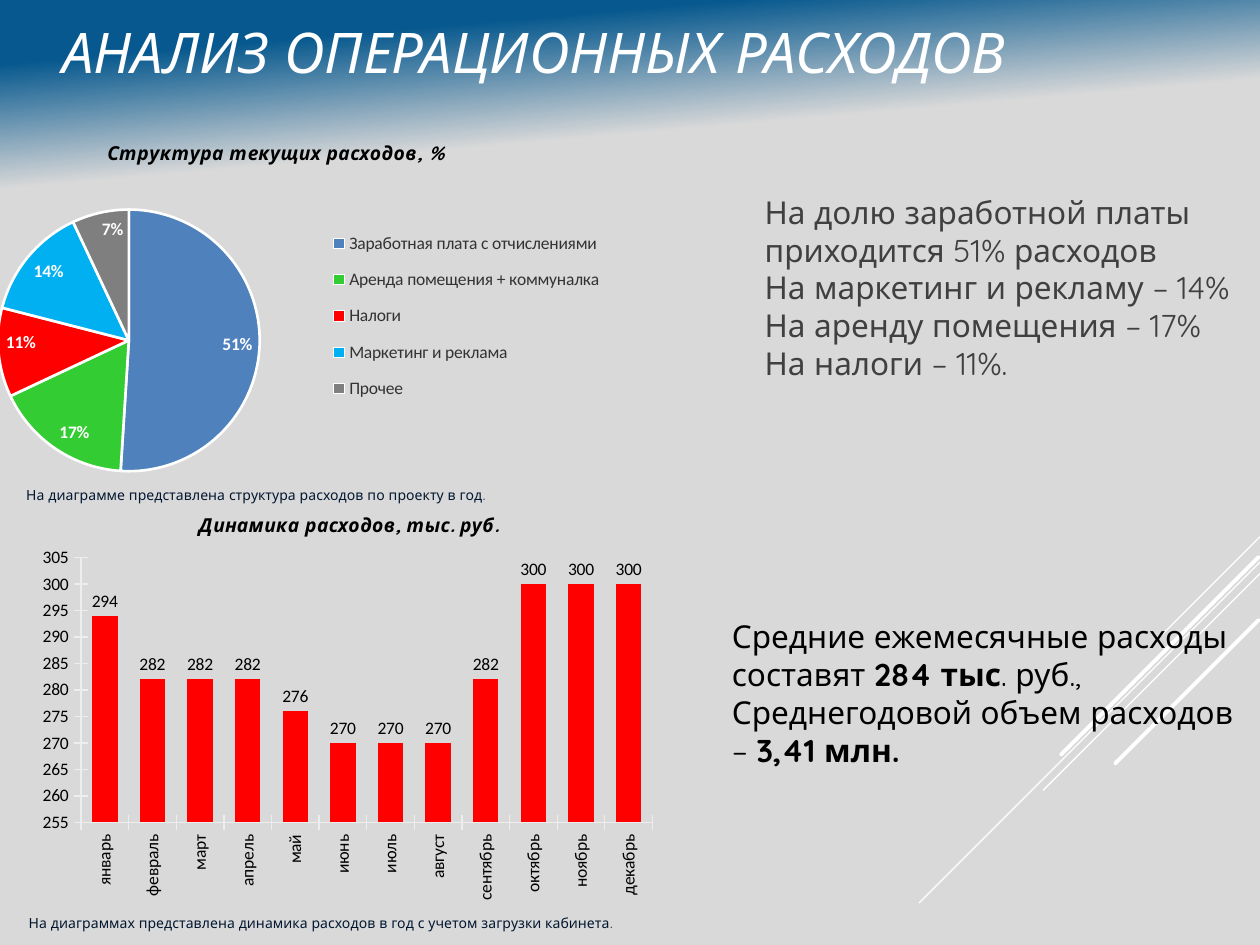
from lxml import etree
from pptx import Presentation
from pptx import util as u
from pptx.chart import data as chart_data
from pptx.dml.color import RGBColor
from pptx.enum import chart as kinds
from pptx.enum import shapes, text
from pptx.oxml import ns

COLOURS = {
    "sky": "06588E", "ground": "D9D9D9", "white": "FFFFFF", "black": "000000",
    "body": "404040", "caption": "031730", "legend": "333333", "axis": "EEEEEE",
    "salary": "4F81BD", "rent": "33CC33", "red": "FF0000",
    "marketing": "00B0F0", "other": "7F7F7F",
}
HEADING_FONT = "Quicksand"
CHART_FONT = "Calibri"
RAYS = [
    (25.4, 10.82, 2.11, 0.75),
    (25.4, 11.33, 6.87, 0.75),
    (25.4, 11.56, 4.37, 0.75),
    (25.37, 11.23, 3.98, 2.25),
    (25.37, 12.5, 2.89, 2.25),
]
EXPENSES = [
    ("Заработная плата с отчислениями", 51, "salary"),
    ("Аренда помещения + коммуналка", 17, "rent"),
    ("Налоги", 11, "red"),
    ("Маркетинг и реклама", 14, "marketing"),
    ("Прочее", 7, "other"),
]
MONTHS = ["январь", "февраль", "март", "апрель", "май", "июнь", "июль",
          "август", "сентябрь", "октябрь", "ноябрь", "декабрь"]
MONTHLY = [294] + [282] * 3 + [276] + [270] * 3 + [282] + [300] * 3


def colour(name):
    return RGBColor.from_string(COLOURS[name])


def style(font, size, shade, face=HEADING_FONT, bold=False, italic=False):
    font.size, font.name = u.Pt(size), face
    font.bold, font.italic = bold, italic
    font.color.rgb = colour(shade)


def place(item, box):
    item.left, item.top, item.width, item.height = map(u.Cm, box)


def paint_background(page):
    fill = page.background.fill
    fill.gradient()
    fill.gradient_angle = 275
    for stop, shade, position in zip(fill.gradient_stops, ("sky", "ground"), (0.06, 0.18)):
        stop.color.rgb = colour(shade)
        stop.position = position


def draw_rays(page):
    tree = page.shapes.title.element.getparent()
    for index, (x, y, reach, weight) in enumerate(RAYS):
        ray = page.shapes.add_connector(
            shapes.MSO_CONNECTOR.STRAIGHT, u.Cm(x), u.Cm(y), u.Cm(x - reach), u.Cm(y + reach))
        ray.line.color.rgb = colour("white")
        ray.line.width = u.Pt(weight)
        ray.line._get_or_add_ln().set("cap", "rnd")
        etree.SubElement(ray.element.spPr, ns.qn("a:effectLst"))
        tree.insert(2 + index, ray.element)


def write_title(title, box):
    place(title, box)
    frame = title.text_frame
    frame.text = "АНАЛИЗ ОПЕРАЦИОННЫХ РАСХОДОВ"
    frame.auto_size = text.MSO_AUTO_SIZE.NONE
    frame.vertical_anchor = text.MSO_ANCHOR.MIDDLE
    para = frame.paragraphs[0]
    para.alignment = text.PP_ALIGN.LEFT
    para._p.get_or_add_pPr().set("marL", str(u.Cm(1)))
    style(para.runs[0].font, 32, "white", italic=True)


def write_body(body, box, lines, shade):
    place(body, box)
    frame = body.text_frame
    frame.text = "\n".join("" for line in lines)
    frame.auto_size = text.MSO_AUTO_SIZE.NONE
    for para, spans in zip(frame.paragraphs, lines):
        para.space_before = u.Pt(0)
        para.line_spacing = 1.0
        properties = para._p.get_or_add_pPr()
        properties.set("marL", "0")
        properties.set("indent", "0")
        etree.SubElement(properties, ns.qn("a:buNone"))
        for words, bold in spans:
            span = para.add_run()
            span.text = words
            style(span.font, 18, shade, bold=bold)


def write_caption(page, box, words):
    caption = page.shapes.add_textbox(*map(u.Cm, box))
    caption.text_frame.word_wrap = True
    caption.text_frame.text = words
    style(caption.text_frame.paragraphs[0].runs[0].font, 8, "caption")


def set_layout(chart, tag, index, **fractions):
    parent = chart.element.find(".//" + ns.qn(tag))
    for old in parent.findall(ns.qn("c:layout")):
        parent.remove(old)
    layout = etree.Element(ns.qn("c:layout"))
    manual = etree.SubElement(layout, ns.qn("c:manualLayout"))
    if tag == "c:plotArea":
        etree.SubElement(manual, ns.qn("c:layoutTarget"), val="inner")
    for key in ("xMode", "yMode"):
        etree.SubElement(manual, ns.qn("c:" + key), val="edge")
    for key, value in fractions.items():
        etree.SubElement(manual, ns.qn("c:" + key), val=str(value))
    parent.insert(index, layout)


def add_titled_chart(page, box, kind, names, values, heading):
    data = chart_data.CategoryChartData()
    data.categories = names
    data.add_series("Series 1", values)
    chart = page.shapes.add_chart(kind, *map(u.Cm, box), data).chart
    style(chart.font, 10, "black", CHART_FONT)
    chart.has_title = True
    chart.chart_title.text_frame.text = heading
    span = chart.chart_title.text_frame.paragraphs[0].runs[0]
    style(span.font, 11, "black", bold=True, italic=True)
    set_layout(chart, "c:title", 1, x=0.26, y=0.05)
    return chart


def draw_structure(page, box):
    names, values, shades = zip(*EXPENSES)
    chart = add_titled_chart(page, box, kinds.XL_CHART_TYPE.PIE, names, values,
                             "Структура текущих расходов, %")
    chart.has_legend = True
    chart.legend.position = kinds.XL_LEGEND_POSITION.RIGHT
    chart.legend.include_in_layout = False
    style(chart.legend.font, 10, "legend", CHART_FONT)
    set_layout(chart, "c:legend", 1, x=0.57, y=0.27, w=0.4, h=0.53)
    set_layout(chart, "c:plotArea", 0, x=0.11, y=0.25, w=0.37, h=0.7)
    plot = chart.plots[0]
    plot.vary_by_categories = True
    for index, shade in enumerate(shades):
        slice_format = plot.series[0].points[index].format
        slice_format.fill.solid()
        slice_format.fill.fore_color.rgb = colour(shade)
        slice_format.line.color.rgb = colour("white")
        slice_format.line.width = u.Pt(1.5)
    labels = plot.series[0].data_labels
    labels.show_percentage, labels.show_value = True, False
    labels.number_format, labels.number_format_is_linked = "0%", False
    labels.position = kinds.XL_LABEL_POSITION.INSIDE_END
    style(labels.font, 10, "white", CHART_FONT, bold=True)


def draw_dynamics(page, box):
    chart = add_titled_chart(page, box, kinds.XL_CHART_TYPE.COLUMN_CLUSTERED, MONTHS, MONTHLY,
                             "Динамика расходов, тыс. руб.")
    chart.has_legend = False
    set_layout(chart, "c:plotArea", 0, x=0.08, y=0.17, w=0.9, h=0.63)
    plot = chart.plots[0]
    plot.gap_width = 87
    plot.vary_by_categories = False
    bars = plot.series[0]
    bars.format.fill.solid()
    bars.format.fill.fore_color.rgb = colour("red")
    labels = bars.data_labels
    labels.show_value = True
    labels.number_format, labels.number_format_is_linked = "0", False
    labels.position = kinds.XL_LABEL_POSITION.OUTSIDE_END
    style(labels.font, 10, "black", CHART_FONT)
    for axis in (chart.category_axis, chart.value_axis):
        axis.has_major_gridlines = False
        axis.major_tick_mark = kinds.XL_TICK_MARK.CROSS
        axis.format.line.color.rgb = colour("axis")
        style(axis.tick_labels.font, 10, "black", CHART_FONT)
    names_body = chart.category_axis._element.find(".//" + ns.qn("a:bodyPr"))
    names_body.set("rot", "-5400000")
    names_body.set("vert", "horz")
    scale = chart.value_axis
    scale.minimum_scale, scale.maximum_scale, scale.major_unit = 255, 305, 5
    scale.tick_labels.number_format = "0"
    scale.tick_labels.number_format_is_linked = False


def main():
    deck = Presentation()
    deck.slide_width, deck.slide_height = u.Cm(25.4), u.Cm(19.05)
    page = deck.slides.add_slide(deck.slide_layouts[3])
    paint_background(page)
    draw_rays(page)
    write_title(page.shapes.title, (0, -0.08, 25.4, 2.21))
    write_body(page.placeholders[1], (15.16, 3.76, 10.19, 5.64), [
        [("На долю заработной платы приходится 51% расходов", False)],
        [("На маркетинг и рекламу – 14%", False)],
        [("На аренду помещения – 17%", False)],
        [("На налоги – 11%.", False)],
    ], "body")
    write_body(page.placeholders[2], (14.5, 12.32, 10.85, 3.33), [
        [("Средние ежемесячные расходы составят ", False), ("284 тыс", True), (". руб.,", False)],
        [("Среднегодовой объем расходов – ", False), ("3,41 млн.", True)],
    ], "black")
    write_caption(page, (0.28, 9.68, 11.2, 0.61),
                  "На диаграмме представлена структура расходов по проекту в год.")
    write_caption(page, (0.33, 18.31, 12.9, 0.61),
                  "На диаграммах представлена динамика расходов в год с учетом загрузки кабинета.")
    draw_structure(page, (-1.63, 2.34, 14.33, 7.54))
    draw_dynamics(page, (0.61, 9.8, 12.8, 8.48))
    deck.save("out.pptx")


if __name__ == "__main__":
    main()
